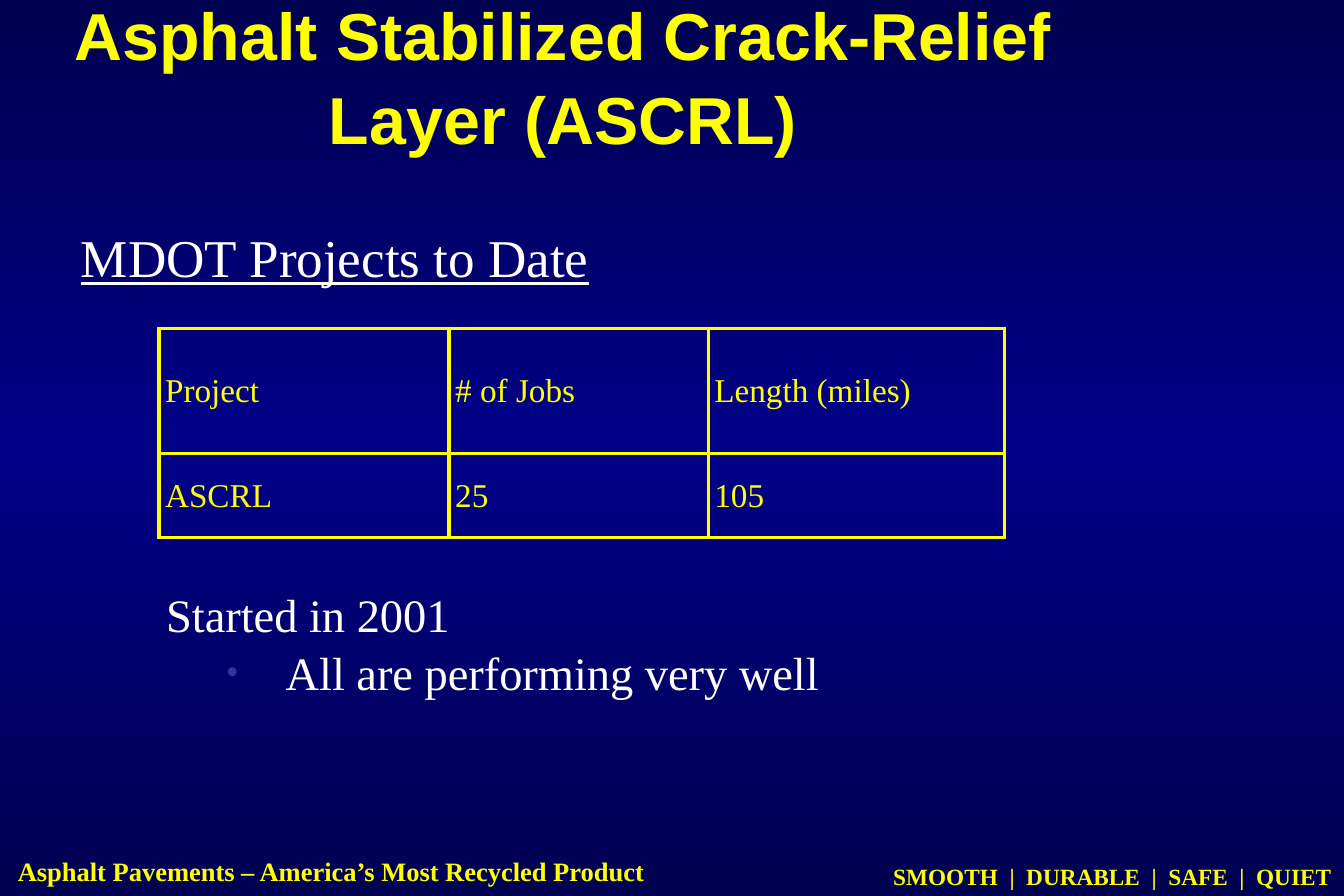
from copy import deepcopy
from lxml.etree import SubElement
from pptx import Presentation
from pptx.dml.color import RGBColor
from pptx.enum.text import MSO_ANCHOR, MSO_AUTO_SIZE, PP_ALIGN
from pptx.oxml import parse_xml
from pptx.oxml.ns import nsdecls, qn
from pptx.util import Cm, Pt

# Content
TITLE = "Asphalt Stabilized Crack-Relief Layer (ASCRL)"
HEAD = "MDOT Projects to Date"
ROWS = [("Project", "# of Jobs", "Length (miles)"),
        ("ASCRL", "25", "105")]
NOTES = ["Started in 2001", "All are performing very well"]
MOTTO = "Asphalt Pavements – America’s Most Recycled Product"
VALUES = "SMOOTH  |  DURABLE  |  SAFE  |  QUIET"

# Look
YELLOW, WHITE, BULLET = "FFFF00", "FFFFFF", "333399"
SKY = [(0, "000050"), (0.5, "000086"), (1, "000050")]
SERIF, SANS = "Times New Roman", "Arial"
WIDTHS, HEIGHTS = (6.17, 5.51, 6.3), (2.67, 1.78)
PAD = Cm(0.13)


def paint(color):
    return RGBColor.from_string(color)


def style(para, size, color, face=SERIF, bold=False, line=False):
    font = para.font
    font.name, font.size = face, Pt(size)
    font.bold, font.underline = bold, line
    font.color.rgb = paint(color)


def place(shape, left, top, width, height):
    shape.left, shape.top = Cm(left), Cm(top)
    shape.width, shape.height = Cm(width), Cm(height)


def label(text, box, size, color, align=PP_ALIGN.LEFT, inset=0.25, **look):
    frame = slide.shapes.add_textbox(*map(Cm, box)).text_frame
    frame.word_wrap = True
    frame.margin_left = Cm(inset)
    para = frame.paragraphs[0]
    para.text, para.alignment = text, align
    style(para, size, color, **look)


def border(cell):
    props = cell._tc.get_or_add_tcPr()
    for i, side in enumerate("LRTB"):
        props.insert(i, parse_xml(
            f'<a:ln{side} {nsdecls("a")} w="{Pt(2.25)}"><a:solidFill>'
            f'<a:srgbClr val="{YELLOW}"/></a:solidFill></a:ln{side}>'))


def indent(para, left, hang, mark=None):
    props = para._p.get_or_add_pPr()
    props.set("marL", str(Cm(left)))
    props.set("indent", str(Cm(hang)))
    if not mark:
        SubElement(props, qn("a:buNone"))
        return
    tint = SubElement(props, qn("a:buClr"))
    SubElement(tint, qn("a:srgbClr"), val=BULLET)
    SubElement(props, qn("a:buSzPct"), val="80000")
    SubElement(props, qn("a:buFont"), typeface=SERIF)
    SubElement(props, qn("a:buChar"), char=mark)


deck = Presentation()
deck.slide_width, deck.slide_height = Cm(28.58), Cm(19.05)
slide = deck.slides.add_slide(deck.slide_layouts[1])

# Background
fill = slide.background.fill
fill.gradient()
fill.gradient_angle = 270
stops = slide._element.find(".//" + qn("a:gsLst"))
stops.append(deepcopy(stops[0]))
for stop, (spot, color) in zip(fill.gradient_stops, SKY):
    stop.position = spot
    stop.color.rgb = paint(color)

# Title
title = slide.shapes.title
place(title, -0.08, -0.03, 24.1, 3.2)
frame = title.text_frame
frame.text = TITLE
frame.auto_size = MSO_AUTO_SIZE.NONE
frame.vertical_anchor = MSO_ANCHOR.MIDDLE
para = frame.paragraphs[0]
para.alignment, para.line_spacing = PP_ALIGN.CENTER, 1.05
style(para, 40, YELLOW, SANS, bold=True)

# Heading and footers
label(HEAD, (1.47, 4.65, 13.13, 1.6), 32, WHITE, line=True)
label(MOTTO, (0, 18.06, 16.2, 0.94), 16, YELLOW, inset=0.38, bold=True)
label(VALUES, (18.31, 18.21, 10.26, 0.86), 14, YELLOW,
      PP_ALIGN.RIGHT, bold=True)

# Project table
table = slide.shapes.add_table(
    len(ROWS), len(WIDTHS), Cm(3.38), Cm(6.98),
    Cm(sum(WIDTHS)), Cm(sum(HEIGHTS))).table
table.first_row = table.horz_banding = False
for col, width in zip(table.columns, WIDTHS):
    col.width = Cm(width)
for row, height, texts in zip(table.rows, HEIGHTS, ROWS):
    row.height = Cm(height)
    for cell, text in zip(row.cells, texts):
        cell.text = text
        cell.fill.background()
        cell.vertical_anchor = MSO_ANCHOR.MIDDLE
        cell.margin_left = cell.margin_right = PAD
        cell.margin_top = cell.margin_bottom = PAD
        style(cell.text_frame.paragraphs[0], 20, YELLOW)
        border(cell)

# Notes
body = slide.placeholders[1]
place(body, 3.28, 12.27, 21.8, 5.38)
frame = body.text_frame
frame.text = "\n".join(NOTES)
frame.auto_size = MSO_AUTO_SIZE.NONE
for level, para in enumerate(frame.paragraphs):
    para.level = level
    para.space_before, para.line_spacing = Pt(0), 1.05
    indent(para, 2.54 * level, -1.27 * level, "•" if level else None)
    style(para, 28, WHITE)

deck.save("out.pptx")
